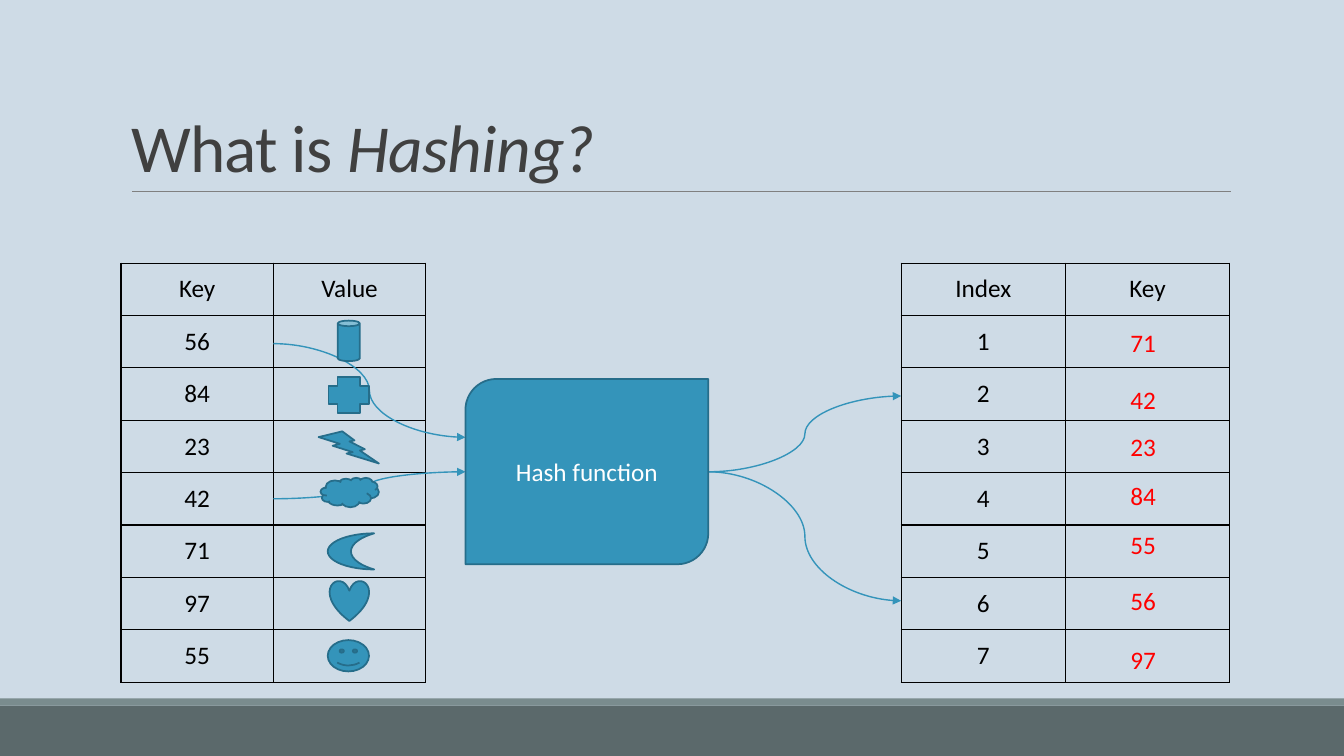
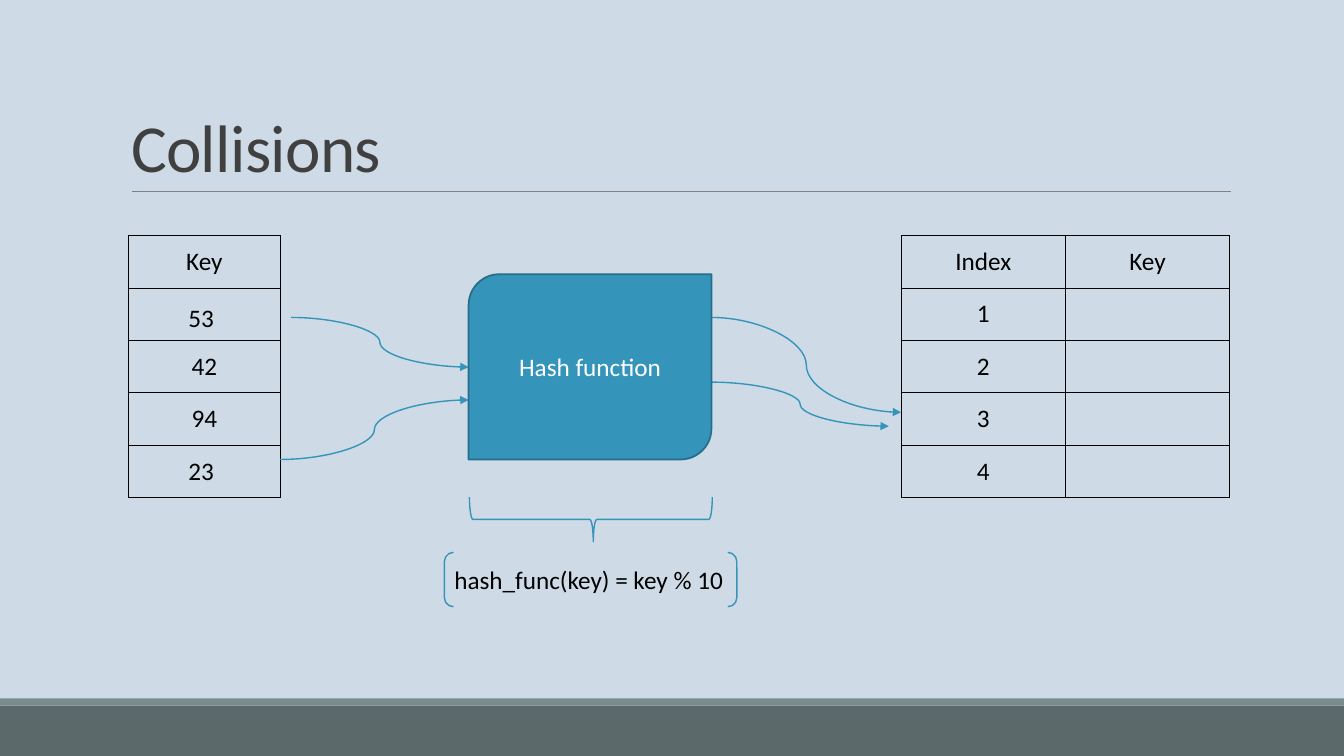
from pptx import Presentation
from pptx.dml.color import RGBColor
from pptx.enum import shapes, text
from pptx.oxml import parse_xml
from pptx.oxml.ns import nsdecls, qn
from pptx.oxml.xmlchemy import OxmlElement
from pptx.util import Cm, Pt

SKY = RGBColor(0xCE, 0xDB, 0xE6)
SLATE = RGBColor(0x5B, 0x69, 0x6B)
SLATE_LIGHT = RGBColor(0x7A, 0x8C, 0x8E)
GREY = RGBColor(0x80, 0x80, 0x80)
CHARCOAL = RGBColor(0x40, 0x40, 0x40)
BLUE = RGBColor(0x34, 0x94, 0xBA)
BLUE_DARK = RGBColor(0x26, 0x6D, 0x8A)
BLACK = RGBColor(0, 0, 0)
WHITE = RGBColor(0xFF, 0xFF, 0xFF)
RED = RGBColor(0xFF, 0, 0)

FONT = "Calibri"
ROW_HEIGHT = 1.32
CENTER = text.PP_ALIGN.CENTER
LEFT = text.PP_ALIGN.LEFT
KIND = shapes.MSO_SHAPE


def write(para, words, color, align=CENTER, size=18):
    """Add one formatted run to a paragraph and return it."""
    para.alignment = align
    span = para.add_run()
    span.text = words
    span.font.name = FONT
    span.font.size = Pt(size)
    span.font.color.rgb = color
    return span


def add_grid(page, left, top, column_width, rows):
    """Add an unfilled table with thin black borders."""
    columns = len(rows[0])
    table = page.shapes.add_table(
        len(rows), columns, Cm(left), Cm(top),
        Cm(column_width * columns), Cm(ROW_HEIGHT * len(rows))).table
    table.first_row = table.horz_banding = False
    for column in table.columns:
        column.width = Cm(column_width)
    for row, values in zip(table.rows, rows):
        row.height = Cm(ROW_HEIGHT)
        for cell, value in zip(row.cells, values):
            cell.vertical_anchor = text.MSO_ANCHOR.MIDDLE
            properties = cell._tc.get_or_add_tcPr()
            for side in ("lnL", "lnR", "lnT", "lnB"):
                properties.append(parse_xml(
                    f'<a:{side} {nsdecls("a")} w="{Pt(1)}"><a:solidFill>'
                    f'<a:srgbClr val="{BLACK}"/></a:solidFill></a:{side}>'))
            cell.fill.background()
            if value:
                write(cell.text_frame.paragraphs[0], value, BLACK)


deck = Presentation()
deck.slide_width = Cm(33.87)
deck.slide_height = Cm(19.05)

# Shared layout: background, title place, bands and rule
layout = deck.slide_layouts[5]
layout.background.fill.solid()
layout.background.fill.fore_color.rgb = SKY
title = layout.placeholders[0]
title.left, title.top, title.width, title.height = Cm(3.05), Cm(0.79), Cm(27.94), Cm(4.04)
title.text_frame.vertical_anchor = text.MSO_ANCHOR.BOTTOM

hashing = deck.slides.add_slide(layout)
collisions = deck.slides.add_slide(layout)

for top, height, color in ((17.78, 1.27, SLATE), (17.6, 0.18, SLATE_LIGHT)):
    band = hashing.shapes.add_shape(KIND.RECTANGLE, 0, Cm(top), deck.slide_width, Cm(height))
    band.shadow.inherit = False
    band.fill.solid()
    band.fill.fore_color.rgb = color
    band.line.fill.background()
    layout.shapes.element.append(band.element)

rule = hashing.shapes.add_connector(
    shapes.MSO_CONNECTOR.STRAIGHT, Cm(3.33), Cm(4.83), Cm(31.01), Cm(4.83))
rule.line.color.rgb = GREY
rule.line.width = Pt(0.5)
rule.element.spPr.append(OxmlElement("a:effectLst"))
layout.shapes.element.append(rule.element)

# Titles
for page, parts in (
    (hashing, (("What is ", False), ("Hashing?", True))),
    (collisions, (("Collisions", False),)),
):
    para = page.shapes.title.text_frame.paragraphs[0]
    para.line_spacing = 0.85
    for words, italic in parts:
        span = write(para, words, CHARCOAL, LEFT, 48)
        span.font.italic = italic
        span.font._element.set("spc", "-50")

# Tables
keys = ["56", "84", "23", "42", "71", "97", "55"]
add_grid(hashing, 22.71, 6.63, 4.14,
         [("Index", "Key")] + [(str(index), "") for index in range(1, 8)])
add_grid(hashing, 3.05, 6.63, 3.84, [("Key",)] + [(key,) for key in keys])
add_grid(hashing, 6.89, 6.63, 3.84, [("Value",)] + [("",) for key in keys])
add_grid(collisions, 22.71, 5.94, 4.14,
         [("Index", "Key")] + [(str(index), "") for index in range(1, 5)])
add_grid(collisions, 3.23, 5.94, 3.84, [("Key",), ("",), ("42",), ("94",), ("",)])

# Curved arrows: page, start x and y, end x and y
for page, *ends in (
    (hashing, 6.89, 8.66, 11.73, 11.02),
    (hashing, 17.86, 11.89, 22.71, 15.14),
    (hashing, 6.89, 12.57, 11.73, 11.89),
    (hashing, 17.86, 11.89, 22.71, 9.98),
    (collisions, 7.34, 8, 11.81, 9.25),
    (collisions, 7.06, 11.58, 11.81, 10.08),
    (collisions, 17.93, 8, 22.71, 10.39),
    (collisions, 17.93, 9.63, 22.4, 10.74),
):
    arrow = page.shapes.add_connector(shapes.MSO_CONNECTOR.CURVE, *map(Cm, ends))
    arrow.line.color.rgb = BLUE
    arrow.line.width = Pt(1)
    head = OxmlElement("a:tailEnd")
    head.set("type", "triangle")
    arrow.element.spPr.find(qn("a:ln")).append(head)
    arrow.element.spPr.append(OxmlElement("a:effectLst"))

# Hash function boxes and value symbols: page, kind, words, left, top, width, height
for page, kind, words, *place in (
    (hashing, KIND.ROUND_2_DIAG_RECTANGLE, "Hash function", 11.73, 9.55, 6.12, 4.67),
    (collisions, KIND.ROUND_2_DIAG_RECTANGLE, "Hash function", 11.81, 6.91, 6.12, 4.67),
    (hashing, KIND.CAN, "", 8.51, 8.08, 0.56, 1.02),
    (hashing, KIND.CROSS, "", 8.28, 9.5, 1.02, 0.91),
    (hashing, KIND.LIGHTNING_BOLT, "", 8.03, 10.87, 1.52, 0.81),
    (hashing, KIND.CLOUD, "", 8.08, 12.04, 1.47, 0.74),
    (hashing, KIND.MOON, "", 8.26, 13.44, 1.17, 0.91),
    (hashing, KIND.HEART, "", 8.31, 14.63, 0.99, 1.02),
    (hashing, KIND.SMILEY_FACE, "", 8.26, 16.13, 1.04, 0.79),
):
    box = page.shapes.add_shape(kind, *map(Cm, place))
    box.shadow.inherit = False
    box.fill.solid()
    box.fill.fore_color.rgb = BLUE
    box.line.color.rgb = BLUE_DARK
    box.line.width = Pt(1.25)
    if words:
        box.text_frame.vertical_anchor = text.MSO_ANCHOR.MIDDLE
        write(box.text_frame.paragraphs[0], words, WHITE)

# Brace and brackets around the formula
brace = collisions.shapes.add_shape(KIND.RIGHT_BRACE, Cm(14.33), Cm(10.03), Cm(1.12), Cm(6.12))
brace.rotation = 90
brace.adjustments[0] = 0.08
brace.adjustments[1] = 0.49
brackets = collisions.shapes.add_shape(
    KIND.DOUBLE_BRACKET, Cm(11.2), Cm(13.92), Cm(7.37), Cm(1.37))
for outline in (brace, brackets):
    outline.shadow.inherit = False
    outline.fill.background()
    outline.line.color.rgb = BLUE
    outline.line.width = Pt(1)

# Loose labels: page, words, colour, left, top, width
for page, words, color, left, top, width in (
    (hashing, "71", RED, 28.24, 8.13, 1.17),
    (hashing, "42", RED, 28.24, 9.55, 1.17),
    (hashing, "23", RED, 28.24, 10.74, 1.17),
    (hashing, "84", RED, 28.24, 11.99, 1.17),
    (hashing, "55", RED, 28.24, 13.21, 1.17),
    (hashing, "56", RED, 28.24, 14.63, 1.17),
    (hashing, "97", RED, 28.24, 16.1, 1.17),
    (collisions, "53", BLACK, 4.5, 7.49, 1.17),
    (collisions, "23", BLACK, 4.5, 11.35, 1.17),
    (collisions, "hash_func(key) = key % 10", BLACK, 11.2, 14.1, 7.37),
):
    label = page.shapes.add_textbox(Cm(left), Cm(top), Cm(width), Cm(1.02))
    label.text_frame.word_wrap = False
    label.text_frame.auto_size = text.MSO_AUTO_SIZE.SHAPE_TO_FIT_TEXT
    write(label.text_frame.paragraphs[0], words, color, LEFT)

deck.save("out.pptx")
